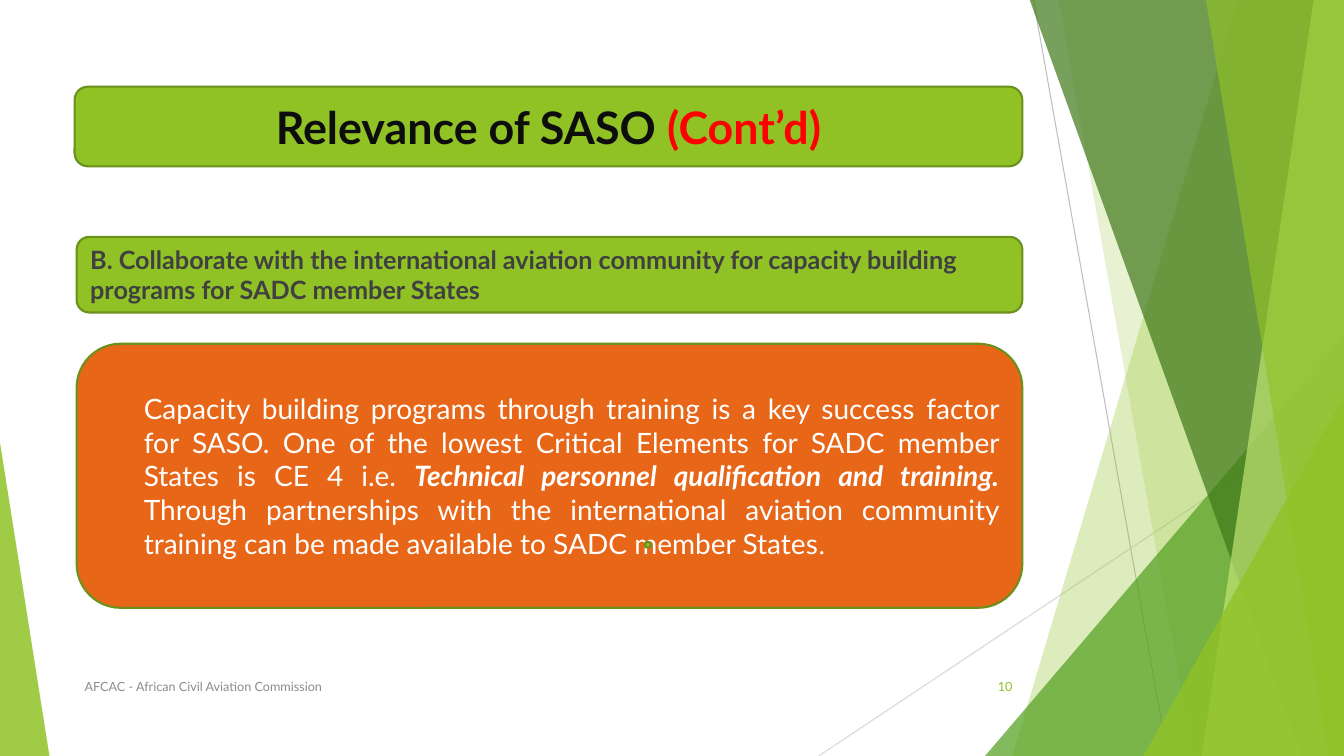
import pptx
import pptx.util
import pptx.dml.color
import pptx.enum.shapes
import pptx.enum.text
import pptx.oxml.ns
import lxml.etree

Inches = pptx.util.Inches
Pt = pptx.util.Pt
KINDS = pptx.enum.shapes.MSO_SHAPE
ALIGN = pptx.enum.text.PP_ALIGN
WIDE, HIGH = 13.33, 7.5
GREEN, EDGE, ORANGE = "90C226", "6B901C", "E76618"


def color(code):
    return pptx.dml.color.RGBColor.from_string(code)


def child(parent, tag, **attrs):
    return lxml.etree.SubElement(parent, pptx.oxml.ns.qn(tag), attrs)


def tint(shape, code, alpha):
    """Fill a shape without outline, with alpha as percent opacity."""
    shape.shadow.inherit = False
    shape.line.fill.background()
    shape.fill.solid()
    shape.fill.fore_color.rgb = color(code)
    tone = shape.fill._xPr.find(".//" + pptx.oxml.ns.qn("a:srgbClr"))
    child(tone, "a:alpha", val=str(alpha * 1000))


def band(slide, top, foot, code, alpha):
    """Draw a band from the slanted edge top-foot to the right slide edge."""
    pen = slide.shapes.build_freeform(Inches(top), Inches(-0.01))
    corners = [(WIDE, -0.01), (WIDE, HIGH), (foot, HIGH)]
    pen.add_line_segments([(Inches(x), Inches(y)) for x, y in corners])
    tint(pen.convert_to_shape(), code, alpha)


def wedge(slide, left, top, width, peak, code, alpha):
    """Draw a triangle standing on the slide's foot; peak is 0 left, 1 right."""
    shape = slide.shapes.add_shape(KINDS.ISOSCELES_TRIANGLE, Inches(left), Inches(top),
                                   Inches(width), Inches(HIGH - top))
    shape.adjustments[0] = peak
    tint(shape, code, alpha)


def ray(slide, start, end, code):
    line = slide.shapes.add_connector(pptx.enum.shapes.MSO_CONNECTOR.STRAIGHT,
                                      *map(Inches, start + end))
    line.line.color.rgb = color(code)
    line.line.width = Pt(0.75)
    child(line._element.spPr, "a:effectLst")


def facets(slide):
    ray(slide, (10.25, 0), (11.58, HIGH), "BFBFBF")
    ray(slide, (WIDE, 4.03), (8.12, HIGH), "D9D9D9")
    band(slide, 12.28, 10.04, GREEN, 30)
    band(slide, 10.5, 11.83, GREEN, 20)
    wedge(slide, 9.77, 3.33, 3.56, 1, "54A021", 72)
    band(slide, 10.21, 12.91, "3F7819", 70)
    band(slide, 13.03, 11.92, "C0E474", 70)
    band(slide, 11.96, 13.18, GREEN, 65)
    wedge(slide, 11.34, 3.93, 1.99, 1, GREEN, 80)
    wedge(slide, 0, 4.39, 0.49, 0, GREEN, 85)


def panel(slide, box, code):
    shape = slide.shapes.add_shape(KINDS.ROUNDED_RECTANGLE, *map(Inches, box))
    shape.shadow.inherit = False
    shape.fill.solid()
    shape.fill.fore_color.rgb = color(code)
    shape.line.color.rgb = color(EDGE)
    shape.line.width = Pt(1.5)
    return shape


def write(shape, parts, size, align=ALIGN.LEFT):
    """Set one paragraph from parts of (text, colour, bold, italic, font)."""
    frame = shape.text_frame
    frame.word_wrap = True
    frame.auto_size = pptx.enum.text.MSO_AUTO_SIZE.NONE
    frame.vertical_anchor = pptx.enum.text.MSO_ANCHOR.MIDDLE
    para = frame.paragraphs[0]
    para.alignment = align
    for text, code, bold, slant, face in parts:
        run = para.add_run()
        run.text = text
        run.font.name = face
        run.font.size = Pt(size)
        run.font.bold = bold
        run.font.italic = slant
        run.font.color.rgb = color(code)
    return para


def header(slide, box):
    panel(slide, box, GREEN)
    title = slide.shapes.title
    title.left, title.top, title.width, title.height = map(Inches, box)
    write(title, [("Relevance of SASO ", "0D0D0D", True, False, "Lato"),
                  ("(Cont’d)", "FF0000", True, False, "Lato")], 32, ALIGN.CENTER)
    slide.shapes._spTree.append(title._element)  # bring the title above its panel


def topic(slide, box):
    text = ("B. Collaborate with the international aviation community "
            "for capacity building programs for SADC member States")
    write(panel(slide, box, GREEN), [(text, "404040", True, False, "Lato")], 18)


def body(slide, box):
    white = "FFFFFF"
    parts = [
        ("Capacity building programs through training is a key success factor for SASO. "
         "One of the lowest Critical Elements for SADC member States is CE 4 i.e. ",
         white, False, False, "Lato"),
        ("Technical personnel qualification and training. ", white, True, True, "Lato"),
        ("Through partnerships with the international aviation community training "
         "can be made available to SADC member States", white, False, False, "Lato"),
        (".", white, False, False, "Times New Roman"),
    ]
    para = write(panel(slide, box, ORANGE), parts, 20, ALIGN.JUSTIFY)
    para.level = 1
    para._p.get_or_add_pPr().set("marL", str(Inches(0.44)))
    left, top = box[:2]
    panel(slide, (left + 5.64, top + 1.97, 0.05, 0.05), GREEN)


def footer(slide, box):
    left, top, width, height = box
    cells = [
        (left, 6.89, "AFCAC - African Civil Aviation Commission", "8C8C8C", ALIGN.LEFT),
        (left + width - 0.75, 0.75, "10", GREEN, ALIGN.RIGHT),
    ]
    for x, wide, text, code, align in cells:
        note = slide.shapes.add_textbox(*map(Inches, (x, top, wide, height)))
        write(note, [(text, code, False, False, "Lato")], 9, align)


def main():
    deck = pptx.Presentation()
    deck.slide_width, deck.slide_height = Inches(WIDE), Inches(HIGH)
    slide = deck.slides.add_slide(deck.slide_layouts.get_by_name("Title Only"))
    facets(slide)
    footer(slide, (0.74, 6.61, 9.4, 0.4))
    body(slide, (0.76, 3.41, 9.38, 2.62))
    topic(slide, (0.76, 2.35, 9.38, 0.75))
    header(slide, (0.74, 0.86, 9.4, 0.79))
    deck.save("out.pptx")


if __name__ == "__main__":
    main()
